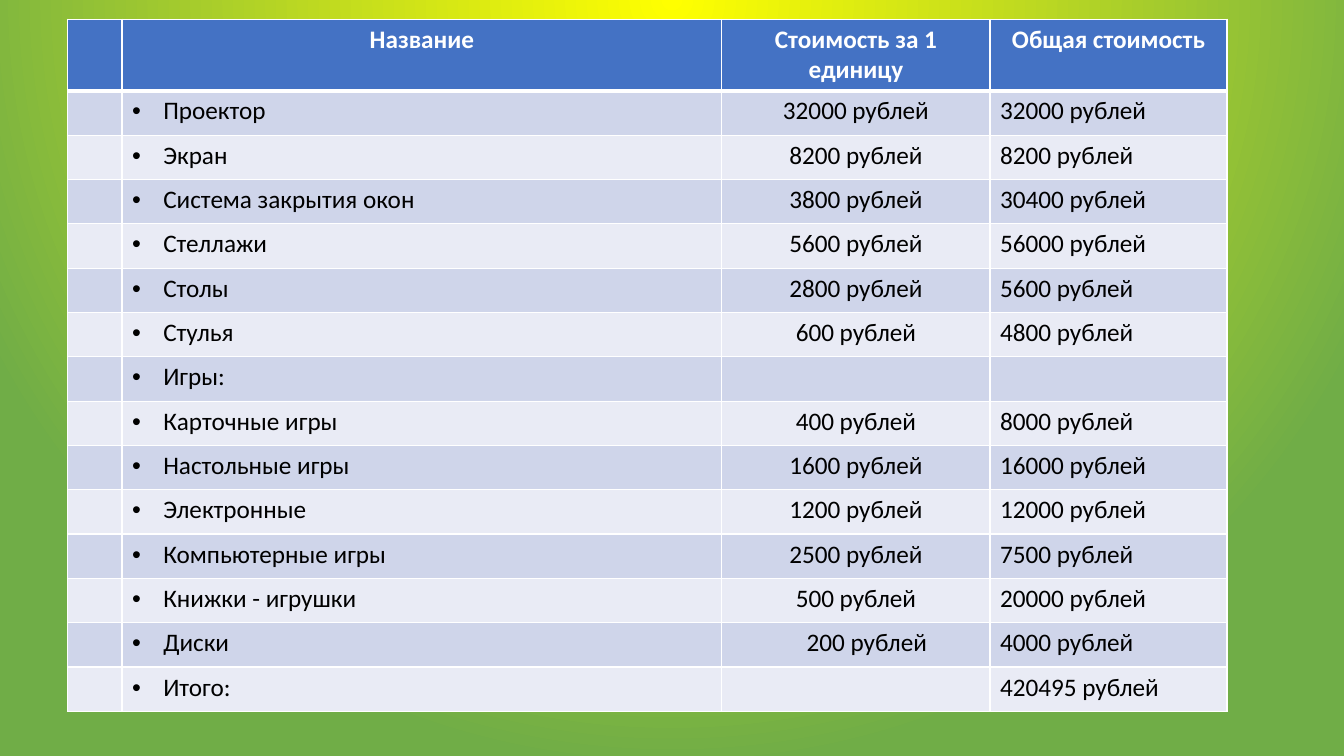
from lxml import etree
from pptx import Presentation
from pptx.dml.color import RGBColor
from pptx.enum.text import PP_ALIGN
from pptx.oxml import parse_xml
from pptx.oxml.ns import nsdecls, qn
from pptx.util import Inches, Pt

COLORS = {
    "glow": "FFFF00",
    "green": "70AD47",
    "header": "4472C4",
    "odd": "CFD5EA",
    "even": "E9EBF5",
    "white": "FFFFFF",
    "black": "000000",
}
COLUMN_WIDTHS = [0.54, 5.95, 2.66, 2.35]
ROW_HEIGHT = 0.44
TABLE_HEIGHT = 7.09
HANGING_INDENT = 0.31
DISCS_INDENT = 0.74
HEADINGS = ["Название", "Стоимость за 1 единицу", "Общая стоимость"]
ITEMS = [
    ("Проектор", "32000 рублей", "32000 рублей"),
    ("Экран", "8200 рублей", "8200 рублей"),
    ("Система закрытия окон", "3800 рублей", "30400 рублей"),
    ("Стеллажи", "5600 рублей", "56000 рублей"),
    ("Столы", "2800 рублей", "5600 рублей"),
    ("Стулья", "600 рублей", "4800 рублей"),
    ("Игры:", "", ""),
    ("Карточные игры", "400 рублей", "8000 рублей"),
    ("Настольные игры", "1600 рублей", "16000 рублей"),
    ("Электронные", "1200 рублей", "12000 рублей"),
    ("Компьютерные игры", "2500 рублей", "7500 рублей"),
    ("Книжки - игрушки", "500 рублей", "20000 рублей"),
    ("Диски", "200 рублей", "4000 рублей"),
    ("Итого:", "", "420495 рублей"),
]


def color(name):
    return RGBColor.from_string(COLORS[name])


def set_background(slide):
    fill = slide.background.fill
    fill.gradient()
    for stop, name in zip(fill.gradient_stops, ["glow", "green"]):
        stop.color.rgb = color(name)
    gradient = slide.element.find(".//" + qn("a:gradFill"))
    gradient.replace(gradient.find(qn("a:lin")), parse_xml(
        f'<a:path {nsdecls("a")} path="circle">'
        '<a:fillToRect l="50000" t="-80000" r="50000" b="180000"/></a:path>'))


def set_borders(cell, top, bottom):
    properties = cell._tc.get_or_add_tcPr()
    widths = {"L": 1, "R": 1, "T": top, "B": bottom}
    for position, (side, width) in enumerate(widths.items()):
        properties.insert(position, parse_xml(
            f'<a:ln{side} {nsdecls("a")} w="{Pt(width)}"><a:solidFill>'
            f'<a:srgbClr val="{COLORS["white"]}"/></a:solidFill></a:ln{side}>'))


def set_indent(paragraph, left, first_line=0):
    properties = paragraph._p.get_or_add_pPr()
    properties.set("marL", str(Inches(left)))
    properties.set("indent", str(Inches(first_line)))
    return properties


def add_bullet(paragraph):
    properties = set_indent(paragraph, HANGING_INDENT, -HANGING_INDENT)
    etree.SubElement(properties, qn("a:buFont")).set("typeface", "Arial")
    etree.SubElement(properties, qn("a:buChar")).set("char", "•")


def fill_cell(cell, text, fill_name, font_name, bold, alignment):
    cell.fill.solid()
    cell.fill.fore_color.rgb = color(fill_name)
    paragraph = cell.text_frame.paragraphs[0]
    paragraph.alignment = alignment
    if text:
        paragraph.text = text
    for run in paragraph.runs:
        run.font.name = "Calibri"
        run.font.size = Pt(18)
        run.font.bold = bold
        run.font.color.rgb = color(font_name)
    return paragraph


def fill_header(table):
    for column, text in enumerate(["", *HEADINGS]):
        cell = table.cell(0, column)
        paragraph = fill_cell(cell, text, "header", "white", True, PP_ALIGN.CENTER)
        if column == 1:
            set_indent(paragraph, HANGING_INDENT, -HANGING_INDENT)
        set_borders(cell, 1, 3)


def fill_item(table, row, item):
    for column, text in enumerate(["", *item]):
        cell = table.cell(row, column)
        shifted = column == 2 and item[0] == "Диски"
        centered = column == 2 and not shifted
        paragraph = fill_cell(
            cell, text, "odd" if row % 2 else "even", "black", False,
            PP_ALIGN.CENTER if centered else PP_ALIGN.LEFT)
        if column == 1:
            add_bullet(paragraph)
        if shifted:
            set_indent(paragraph, DISCS_INDENT)
        set_borders(cell, 3 if row == 1 else 1, 1)


def add_price_table(slide):
    frame = slide.shapes.add_table(
        len(ITEMS) + 1, len(COLUMN_WIDTHS), Inches(0.67), Inches(0.19),
        Inches(sum(COLUMN_WIDTHS)), Inches(TABLE_HEIGHT))
    table = frame.table
    for column, width in zip(table.columns, COLUMN_WIDTHS):
        column.width = Inches(width)
    for row in table.rows:
        row.height = Inches(ROW_HEIGHT)
    frame.height = Inches(TABLE_HEIGHT)
    fill_header(table)
    for row, item in enumerate(ITEMS, start=1):
        fill_item(table, row, item)


def main():
    presentation = Presentation()
    presentation.slide_width = Inches(13.33)
    presentation.slide_height = Inches(7.5)
    slide = presentation.slides.add_slide(presentation.slide_layouts[6])
    set_background(slide)
    add_price_table(slide)
    presentation.save("out.pptx")


if __name__ == "__main__":
    main()
